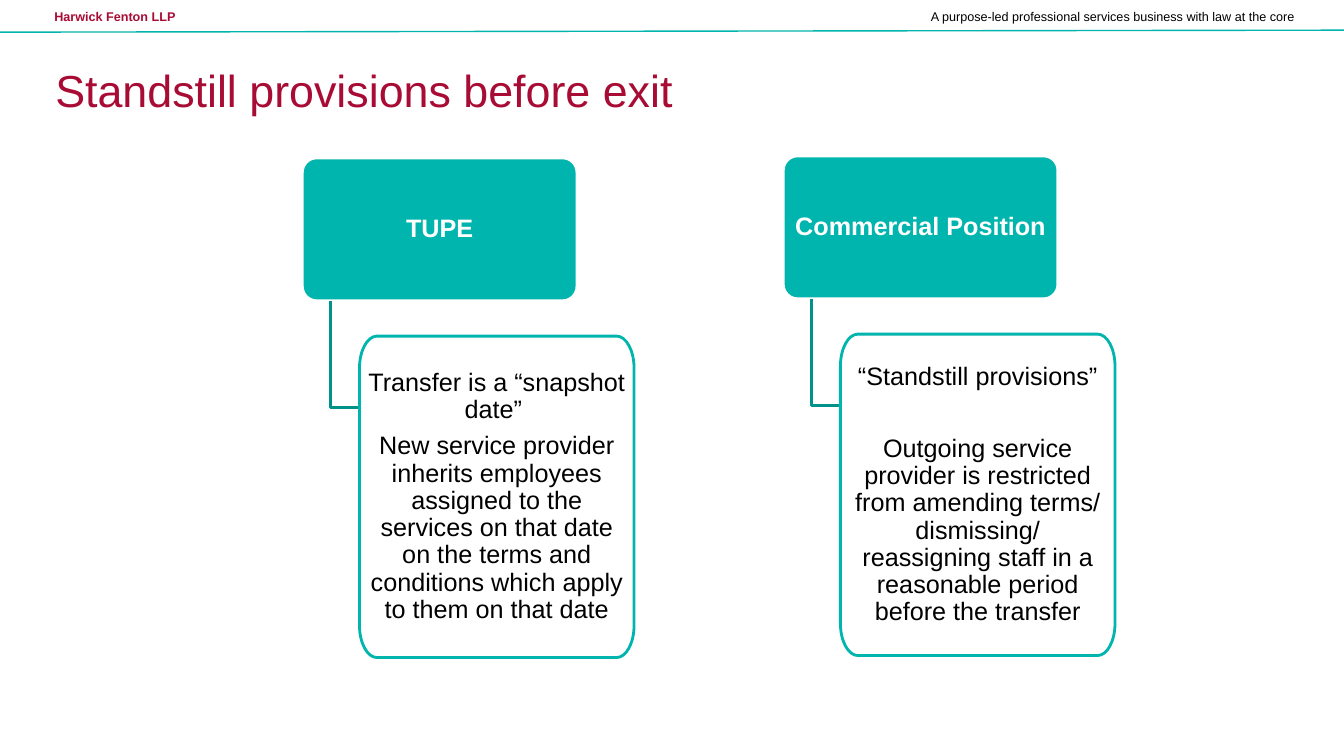
"""Build the slide on standstill provisions before exit."""
from pptx import Presentation
from pptx.dml.color import RGBColor as Rgb
from pptx.enum.shapes import MSO_SHAPE as Kind
from pptx.enum.text import MSO_ANCHOR as Anchor, MSO_AUTO_SIZE as Fit, PP_ALIGN as Align
from pptx.oxml.ns import qn
from pptx.util import Cm, Pt

COLORS = {"red": "A80C35", "teal": "00B5AD", "dark": "00918B", "white": "FFFFFF", "black": "000000"}
FIRM = "Harwick Fenton LLP"
MOTTO = "A purpose-led professional services business with law at the core"
TITLE = "Standstill provisions before exit"
GROUPS = [
    {"at": (7.62, 3.98), "head": "TUPE", "gap": 0,
     "body": ["Transfer is a “snapshot date” ",
              "New service provider inherits employees assigned to the services on that date "
              "on the terms and conditions which apply to them on that date"]},
    {"at": (19.74, 3.93), "head": "Commercial Position", "gap": 25.7,
     "body": ["“Standstill provisions”",
              "Outgoing service provider is restricted from amending terms/ dismissing/ "
              "reassigning staff in a reasonable period before the transfer"]},
]
WIDE, HEAD_H, BODY_H = 6.92, 3.6, 8.1
STEM, SHIFT, DROP, ELBOW = 0.72, 1.44, 4.49, 6.28
HEAD_R, BODY_R = (0.36, 0.36), (0.44, 0.81)
BEND = 0.55
FRAME = {"word_wrap": True, "auto_size": Fit.NONE, "vertical_anchor": Anchor.MIDDLE}
PANEL = {**FRAME, "margin_left": Cm(0.2), "margin_right": Cm(0.2),
         "margin_top": Cm(0.18), "margin_bottom": Cm(0.18)}
LEFT = {"alignment": Align.LEFT}
RIGHT = {"alignment": Align.RIGHT}
MID = {"alignment": Align.CENTER, "line_spacing": 0.9, "space_after": Pt(6.3)}


def apply(item, form):
    for key, val in form.items():
        setattr(item, key, val)


def tint(name):
    return Rgb.from_string(COLORS[name])


def write(shape, lines, size, hue, form, frame=FRAME, bold=False, gap=0):
    text = shape.text_frame
    apply(text, frame)
    for num, line in enumerate(lines):
        para = text.add_paragraph() if num else text.paragraphs[0]
        para.text = line
        apply(para, form)
        if num and gap:
            para.space_before = Pt(gap)
        apply(para.font, {"name": "Arial", "size": Pt(size), "bold": bold})
        para.font.color.rgb = tint(hue)


def stroke(shape, hue, width):
    shape.line.color.rgb = tint(hue)
    shape.line.width = Pt(width)


def draw(slide, dots, hue, close=False):
    dots = [(Cm(x), Cm(y)) for x, y in dots]
    build = slide.shapes.build_freeform(*dots[0])
    build.add_line_segments(dots[1:], close=close)
    shape = build.convert_to_shape()
    shape.shadow.inherit = False
    shape.fill.background()
    stroke(shape, hue, 2)
    return shape


def bow(start, end, hub):
    return [tuple(round(p + BEND * (h - p)) for p, h in zip(dot, hub)) for dot in (start, end)] + [end]


def panel(slide, x, y, high, radii, hue, fill):
    rx, ry = radii
    right, low = x + WIDE, y + high
    dots = [(x, y + ry), (x + rx, y), (right - rx, y), (right, y + ry),
            (right, low - ry), (right - rx, low), (x + rx, low), (x, low - ry)]
    shape = draw(slide, dots, hue, True)
    shape.fill.solid()
    shape.fill.fore_color.rgb = tint(fill)
    marks = list(shape._element.spPr.iter(qn("a:pt")))
    ends = [(int(mark.get("x")), int(mark.get("y"))) for mark in marks]
    for num in range(0, 8, 2):
        start, end = ends[num], ends[num + 1]
        hub = (end[0], start[1]) if num % 4 else (start[0], end[1])
        line = marks[num + 1].getparent()
        arc = line.makeelement(qn("a:cubicBezTo"), {})
        for px, py in bow(start, end, hub):
            arc.append(arc.makeelement(qn("a:pt"), {"x": str(px), "y": str(py)}))
        line.getparent().replace(line, arc)
    return shape


def banner(slide):
    firm = slide.shapes.add_textbox(*map(Cm, (1.12, 0.1, 13.41, 0.64)))
    write(firm, [FIRM], 9, "red", LEFT, bold=True)
    motto = slide.shapes.add_shape(Kind.RECTANGLE, *map(Cm, (13.54, 0.05, 19.33, 0.74)))
    motto.shadow.inherit = False
    motto.fill.background()
    stroke(motto, "white", 0.75)
    write(motto, [MOTTO], 9, "black", RIGHT)
    rule = slide.shapes.add_connector(1, 0, Cm(0.81), Cm(33.87), Cm(0.76))
    stroke(rule, "teal", 1)
    props = rule._element.spPr
    props.append(props.makeelement(qn("a:effectLst"), {}))


def column(slide, group):
    x, y = group["at"]
    head = panel(slide, x, y, HEAD_H, HEAD_R, "white", "teal")
    write(head, [group["head"]], 18, "white", MID, PANEL, True)
    draw(slide, [(x + STEM, y + HEAD_H), (x + STEM, y + ELBOW), (x + SHIFT, y + ELBOW)], "dark")
    body = panel(slide, x + SHIFT, y + DROP, BODY_H, BODY_R, "teal", "white")
    write(body, group["body"], 18, "black", MID, PANEL, gap=group["gap"])


def main():
    deck = Presentation()
    apply(deck, {"slide_width": Cm(33.87), "slide_height": Cm(19.05)})
    slide = deck.slides.add_slide(deck.slide_layouts[5])
    banner(slide)
    title = slide.shapes.title
    apply(title, {"left": Cm(1.14), "top": Cm(0.99), "width": Cm(31.6), "height": Cm(2.54)})
    write(title, [TITLE], 32, "red", LEFT)
    for group in GROUPS:
        column(slide, group)
    deck.save("out.pptx")


if __name__ == "__main__":
    main()
